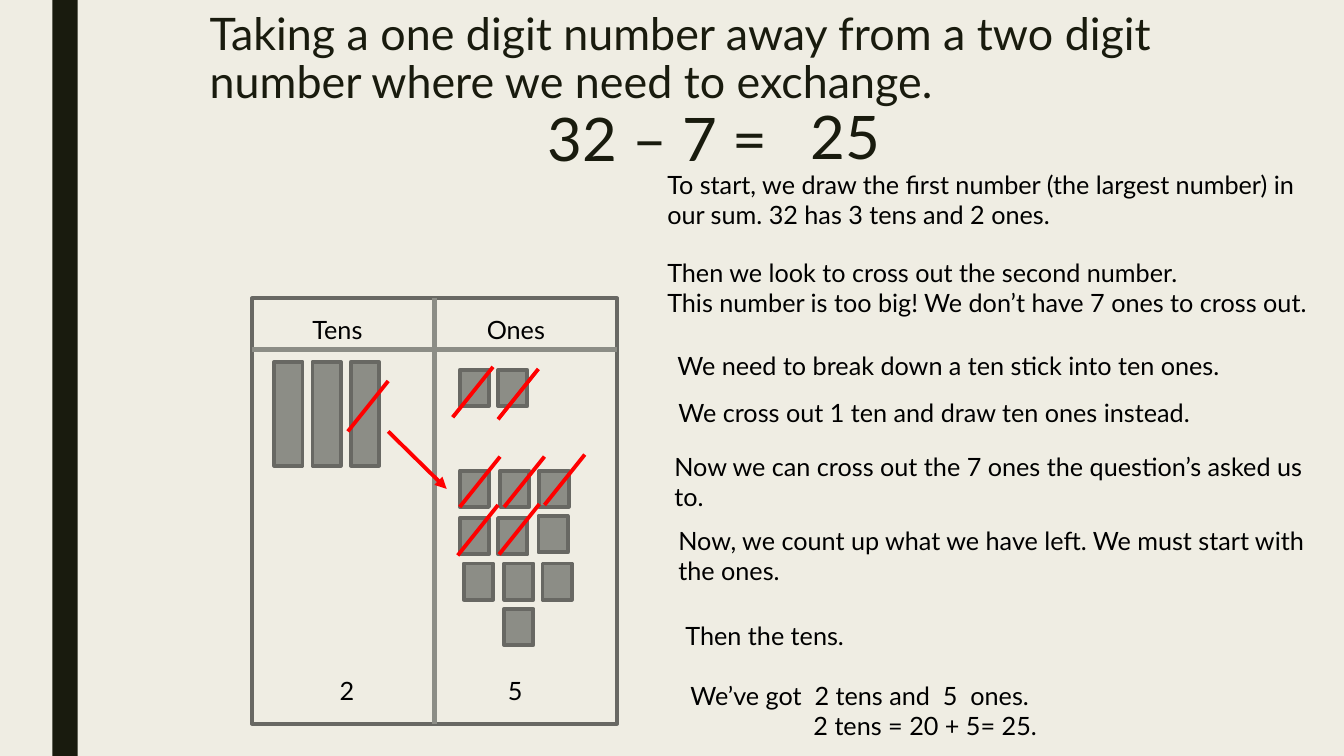
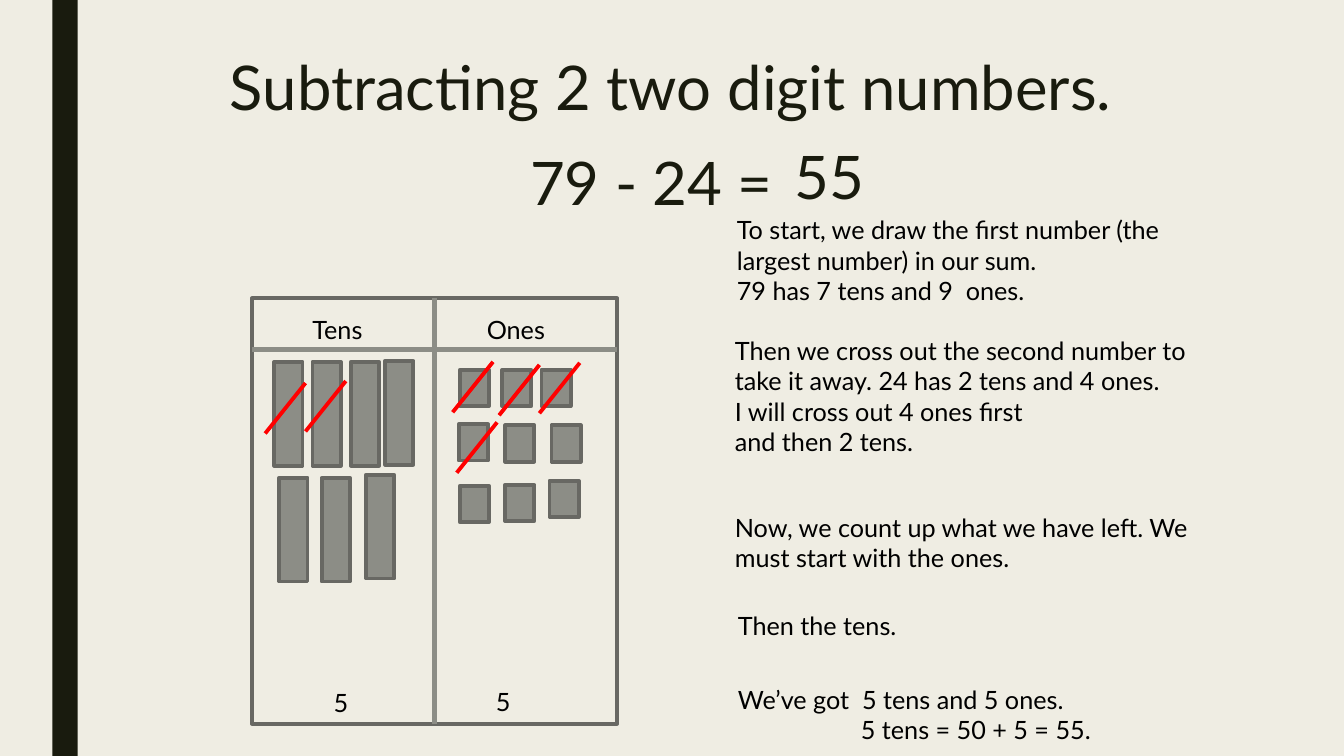
"""Build two slides that teach subtraction with tens and ones."""
import pptx
import pptx.util
import pptx.dml.color
import pptx.enum.shapes
import pptx.enum.text
import pptx.oxml.ns
import lxml.etree

Inches = pptx.util.Inches
Pt = pptx.util.Pt
color = pptx.dml.color.RGBColor.from_string
RECTANGLE = pptx.enum.shapes.MSO_SHAPE.RECTANGLE
STRAIGHT = pptx.enum.shapes.MSO_CONNECTOR.STRAIGHT
AutoSize = pptx.enum.text.MSO_AUTO_SIZE

CREAM, DARK, BLACK = "EFEDE3", "191B0E", "000000"
GREY, OUTLINE, RED = "8C8D86", "686863", "FF0000"
TEN_SIZE = (0.28, 1.03)
ONE_SIZE = (0.29, 0.36)
CROSS_SIZE = (0.4, 0.5)
RESULT_INDENT = 1.22

EQUATION = {"size": 42.9, "color": DARK, "spacing": 0.79, "auto_size": AutoSize.NONE}
BODY = {"size": 18, "color": BLACK, "spacing": 1.0, "auto_size": AutoSize.SHAPE_TO_FIT_TEXT}
TITLE = {"color": DARK, "spacing": 0.89, "auto_size": AutoSize.NONE}


def write_text(shape, box, lines, style):
    """Place a text shape and fill it with styled paragraphs."""
    for name, value in zip(("left", "top", "width", "height"), box):
        setattr(shape, name, Inches(value))
    frame = shape.text_frame
    frame_format = {
        "text": "\n".join(lines),
        "word_wrap": True,
        "auto_size": style["auto_size"],
        "vertical_anchor": pptx.enum.text.MSO_ANCHOR.TOP,
    }
    for name, value in frame_format.items():
        setattr(frame, name, value)
    for paragraph in frame.paragraphs:
        paragraph.alignment = pptx.enum.text.PP_ALIGN.LEFT
        paragraph.line_spacing = style["spacing"]
        for name, value in {"name": "Lato", "size": Pt(style["size"])}.items():
            setattr(paragraph.font, name, value)
        paragraph.font.color.rgb = color(style["color"])


def add_line(slide, start, end, line_color, width, arrow=False):
    """Draw a straight line without shadow, with an arrowhead if wanted."""
    points = [Inches(value) for value in (*start, *end)]
    connector = slide.shapes.add_connector(STRAIGHT, *points)
    connector.line.color.rgb = color(line_color)
    connector.line.width = Pt(width)
    qualified = pptx.oxml.ns.qn
    properties = connector._element.spPr
    if arrow:
        outline = properties.find(qualified("a:ln"))
        lxml.etree.SubElement(outline, qualified("a:tailEnd"), type="triangle")
    lxml.etree.SubElement(properties, qualified("a:effectLst"))
    return connector


LESSONS = [
    {
        "title": "Taking a one digit number away from a two digit number where we need to exchange.",
        "title_at": (1.98, 0.07),
        "title_size": 32,
        "equation": [(5.33, 1.1, "32 – 7 ="), (7.94, 1.08, "25")],
        "counts": [(3.27, 6.65, "2"), (4.94, 6.65, "5")],
        "tens": [(2.72, 3.59), (3.1, 3.59), (3.48, 3.59)],
        "ones": [
            (4.56, 3.67), (4.94, 3.67),
            (4.56, 4.67), (4.96, 4.67), (5.35, 4.67),
            (4.56, 5.14), (4.94, 5.14), (5.34, 5.12),
            (4.6, 5.59), (5, 5.59), (5.38, 5.59),
            (5, 6.04),
        ],
        "crosses": [
            (3.45, 4.28), (4.49, 4.14), (4.94, 4.16), (4.56, 5.03),
            (5, 5.03), (5.4, 5.01), (4.54, 5.51), (4.95, 5.5),
        ],
        "arrows": [((3.85, 4.28), (4.43, 4.85))],
        "steps": [
            (6.52, 1.63, 6.74, ["To start, we draw the first number (the largest number) in our sum. 32 has 3 tens and 2 ones."]),
            (6.52, 2.5, 6.74, ["Then we look to cross out the second number.",
                               "This number is too big! We don’t have 7 ones to cross out."]),
            (6.62, 3.43, 6.52, ["We need to break down a ten stick into ten ones."]),
            (6.63, 3.89, 6.52, ["We cross out 1 ten and draw ten ones instead."]),
            (6.59, 4.43, 6.59, ["Now we can cross out the 7 ones the question’s asked us to."]),
            (6.63, 5.16, 6.63, ["Now, we count up what we have left. We must start with the ones."]),
            (6.7, 6.11, 6.45, ["Then the tens."]),
            (6.75, 6.7, 5.56, ["We’ve got  2 tens and  5  ones.", "2 tens = 20 + 5= 25."]),
        ],
    },
    {
        "title": "Subtracting 2 two digit numbers.",
        "title_at": (2.18, 0.52),
        "title_size": 44,
        "equation": [(5.16, 1.54, "79 - 24 ="), (7.78, 1.48, "55")],
        "counts": [(3.21, 6.77, "5"), (4.82, 6.76, "5")],
        "tens": [
            (2.72, 3.59), (3.1, 3.59), (3.48, 3.59), (3.82, 3.58),
            (2.77, 4.74), (3.19, 4.74), (3.63, 4.71),
        ],
        "ones": [
            (4.56, 3.67), (4.98, 3.67), (5.37, 3.67),
            (4.55, 4.21), (5.01, 4.22), (5.47, 4.22),
            (4.56, 4.82), (5.01, 4.81), (5.45, 4.77),
        ],
        "crosses": [
            (4.49, 4.09), (4.95, 4.12), (5.35, 4.1),
            (4.53, 4.69), (2.63, 4.3), (3.03, 4.28),
        ],
        "arrows": [],
        "steps": [
            (7.21, 2.08, 5.08, ["To start, we draw the first number (the largest number) in our sum.",
                                "79 has 7 tens and 9  ones."]),
            (7.19, 3.28, 5.08, ["Then we cross out the second number to take it away. 24 has 2 tens and 4 ones.",
                                "I will cross out 4 ones first", "and then 2 tens."]),
            (7.19, 5.03, 5.08, ["Now, we count up what we have left. We must start with the ones."]),
            (7.22, 6.01, 5.08, ["Then the tens."]),
            (7.22, 6.74, 5.08, ["We’ve got  5 tens and 5 ones.", "5 tens = 50 + 5 = 55."]),
        ],
    },
]

presentation = pptx.Presentation()
presentation.slide_width = Inches(13.33)
presentation.slide_height = Inches(7.5)
master = presentation.slide_master
master.background.fill.solid()
master.background.fill.fore_color.rgb = color(CREAM)

for number, lesson in enumerate(LESSONS):
    slide = presentation.slides.add_slide(presentation.slide_layouts[5])
    shapes = slide.shapes

    if number == 0:
        band = shapes.add_shape(RECTANGLE, Inches(0.52), 0, Inches(0.25), Inches(7.5))
        band.shadow.inherit = False
        band.fill.solid()
        band.fill.fore_color.rgb = color(DARK)
        band.line.fill.background()
        master.shapes._spTree.append(band._element)

    write_text(shapes.title, (*lesson["title_at"], 10.5, 1.62), [lesson["title"]],
               {**TITLE, "size": lesson["title_size"]})

    rectangles = [(2.5, 2.96, 3.62, 4.22, None)]
    rectangles += [(*corner, *TEN_SIZE, GREY) for corner in lesson["tens"]]
    rectangles += [(*corner, *ONE_SIZE, GREY) for corner in lesson["ones"]]
    for index, (*box, fill_color) in enumerate(rectangles):
        rectangle = shapes.add_shape(RECTANGLE, *[Inches(value) for value in box])
        rectangle.shadow.inherit = False
        rectangle.line.color.rgb = color(OUTLINE)
        rectangle.line.width = Pt(2.75)
        if fill_color:
            rectangle.fill.solid()
            rectangle.fill.fore_color.rgb = color(fill_color)
        else:
            rectangle.fill.background()
        if index == 0:
            divider = add_line(slide, (4.31, 2.96), (4.31, 7.18), GREY, 3.75)
            divider.begin_connect(rectangle, 0)
            divider.end_connect(rectangle, 2)
            add_line(slide, (2.5, 3.47), (6.12, 3.47), GREY, 3.75)

    texts = [(left, top, 10.5, 0.67, [text], EQUATION) for left, top, text in lesson["equation"]]
    texts += [(left, 3.07, 1.56, 0.4, [text], BODY) for left, text in ((3, "Tens"), (4.73, "Ones"))]
    texts += [(left, top, 0.46, 0.4, [text], BODY) for left, top, text in lesson["counts"]]
    texts += [(left, top, width, 0.4, lines, BODY) for left, top, width, lines in lesson["steps"]]
    for *box, lines, style in texts:
        text_box = shapes.add_textbox(0, 0, 0, 0)
        write_text(text_box, box, lines, style)
    result = text_box.text_frame.paragraphs[-1]
    result._p.get_or_add_pPr().set("marL", str(Inches(RESULT_INDENT)))

    for left, bottom in lesson["crosses"]:
        end = (left + CROSS_SIZE[0], bottom - CROSS_SIZE[1])
        add_line(slide, (left, bottom), end, RED, 2.75)
    for start, end in lesson["arrows"]:
        add_line(slide, start, end, RED, 2.75, arrow=True)

presentation.save("out.pptx")
